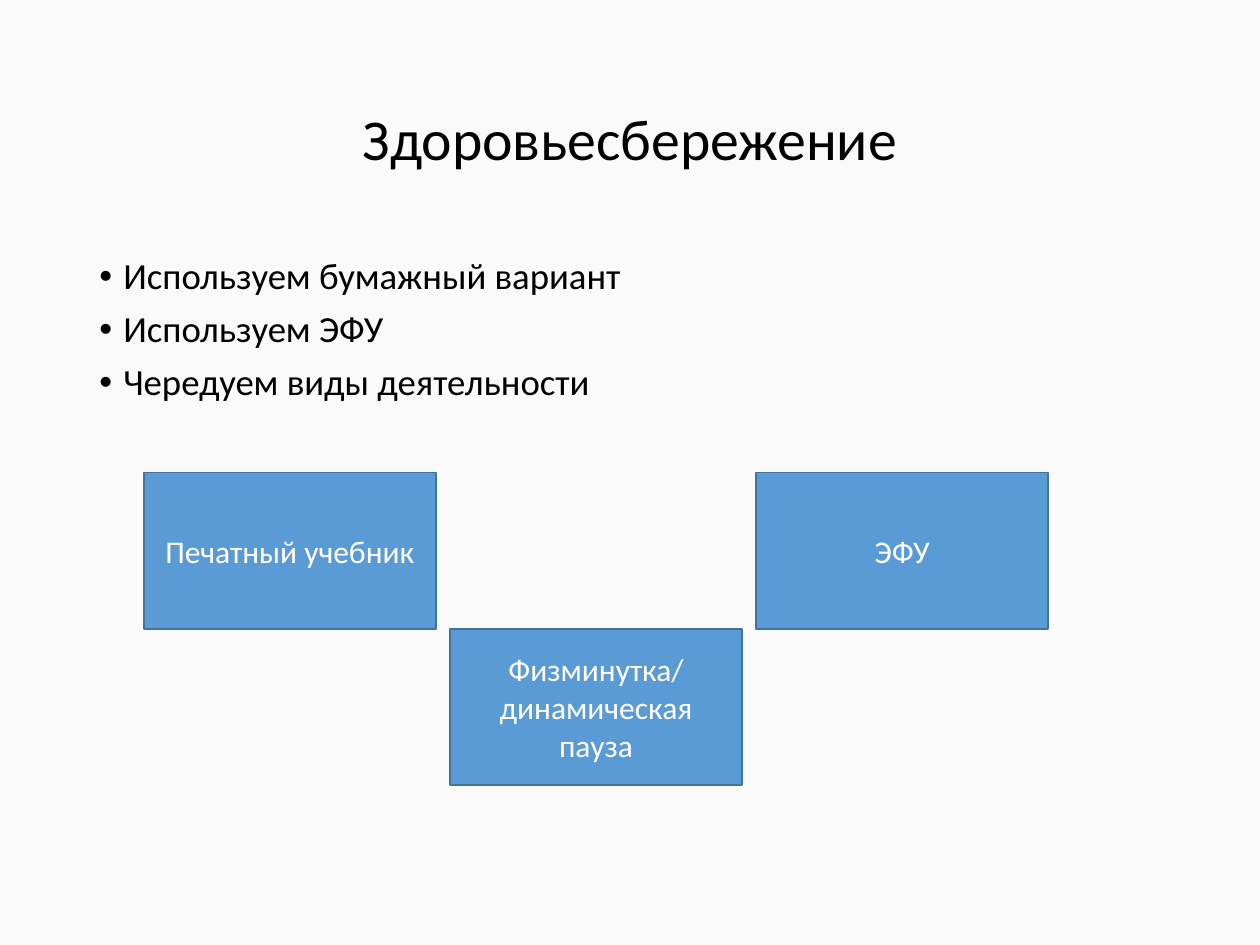
from lxml.etree import SubElement
from pptx import Presentation
from pptx.dml.color import RGBColor
from pptx.enum.shapes import MSO_SHAPE
from pptx.enum.text import MSO_ANCHOR as Anchor, PP_ALIGN as Align
from pptx.oxml.ns import qn
from pptx.util import Inches, Pt

color = RGBColor.from_string


def write(shape, lines, size, ink="000000", align=Align.CENTER, anchor=Anchor.MIDDLE,
          line_spacing=1.0, gap=0, bullet=None, indent=0.19):
    """Fill the shape with one paragraph per line; gap is the points between them."""
    frame = shape.text_frame
    frame.word_wrap = True
    frame.vertical_anchor = anchor
    for number, line in enumerate(lines):
        paragraph = frame.paragraphs[0] if number == 0 else frame.add_paragraph()
        paragraph.text = line
        paragraph.alignment = align
        paragraph.line_spacing = line_spacing
        if number:
            paragraph.space_before = Pt(gap)
        if bullet:
            properties = paragraph._p.get_or_add_pPr()
            properties.set("marL", str(Inches(indent)))
            properties.set("indent", str(-Inches(indent)))
            SubElement(properties, qn("a:buFont"), typeface="Arial")
            SubElement(properties, qn("a:buChar"), char=bullet)
        paragraph.font.name = "Calibri"
        paragraph.font.size = Pt(size)
        paragraph.font.color.rgb = color(ink)


presentation = Presentation()
presentation.slide_width = Inches(10)
presentation.slide_height = Inches(7.5)
slide = presentation.slides.add_slide(presentation.slide_layouts[6])
slide.background.fill.solid()
slide.background.fill.fore_color.rgb = color("FAFAFA")

# Title and bullet list share the same margins
margin = Inches(0.69)
text_width = presentation.slide_width - 2 * margin
title = slide.shapes.add_textbox(margin, Inches(0.4), text_width, Inches(1.45))
write(title, ["Здоровьесбережение"], 33, line_spacing=0.9)

body = slide.shapes.add_textbox(margin, Inches(2), text_width, Inches(4.76))
write(body, ["Используем бумажный вариант", "Используем ЭФУ", "Чередуем виды деятельности"],
      21, align=Align.LEFT, anchor=Anchor.TOP, line_spacing=0.9, gap=7.5, bullet="•")

# Activity boxes: equal columns, the middle one a row lower
grid_left, grid_top = Inches(1.14), Inches(3.75)
box_width, box_height = Inches(2.32), Inches(1.24)
column_step = Inches(2.43)
activities = [("Печатный учебник", 0), ("Физминутка/динамическая пауза", 1), ("ЭФУ", 0)]

for column, (activity, row) in enumerate(activities):
    box = slide.shapes.add_shape(MSO_SHAPE.RECTANGLE, grid_left + column * column_step,
                                 grid_top + row * box_height, box_width, box_height)
    box.shadow.inherit = False
    box.fill.solid()
    box.fill.fore_color.rgb = color("5B9BD5")
    box.line.color.rgb = color("43739E")
    box.line.width = Pt(1)
    write(box, [activity], 18, ink="FFFFFF")

presentation.save("out.pptx")
